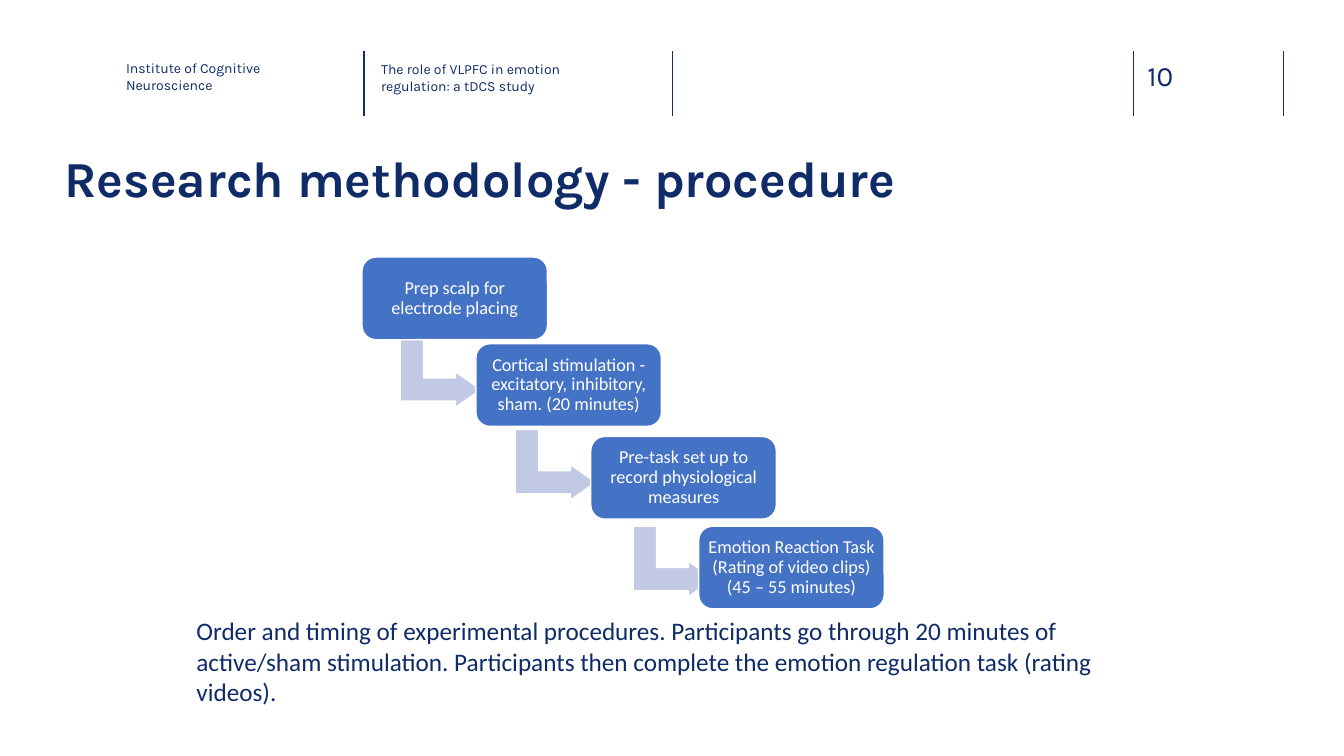
from lxml import etree
from pptx import Presentation
from pptx.dml.color import RGBColor
from pptx.enum.shapes import MSO_CONNECTOR as Connector, MSO_SHAPE as Shape
from pptx.enum.text import MSO_ANCHOR as Anchor, PP_ALIGN as Align
from pptx.oxml.ns import qn
from pptx.util import Inches, Pt

NAVY, BLUE, PALE, WHITE = "0F2C68", "4472C4", "C1C9E4", "FFFFFF"
RULE = "102D69"

STEPS = [
    ("Prep scalp for electrode placing", 3.59, 2.55),
    ("Cortical stimulation - excitatory, inhibitory, sham. (20 minutes)", 4.72, 3.41),
    ("Pre-task set up to record physiological measures", 5.86, 4.33),
    ("Emotion Reaction Task (Rating of video clips) (45 – 55 minutes)", 6.93, 5.22),
]
ARROW_OFFSETS = [(0.43, 0.74), (0.44, 0.8), (0.47, 0.84)]


def color(value):
    return RGBColor.from_string(value)


def style_text(frame, text, size, font, ink, bold=False, inset=0.0):
    frame.word_wrap = True
    frame.margin_left = frame.margin_right = Inches(inset)
    frame.margin_top = frame.margin_bottom = Inches(min(inset, 0.05))
    frame.text = text
    for span in frame.paragraphs[0].runs:
        span.font.size = Pt(size)
        span.font.name = font
        span.font.bold = bold
        span.font.color.rgb = color(ink)


def add_text(slide, box, text, size, font="Karla", **style):
    label = slide.shapes.add_textbox(*map(Inches, box))
    style_text(label.text_frame, text, size, font, NAVY, **style)


def add_block(slide, kind, box, fill):
    block = slide.shapes.add_shape(kind, *map(Inches, box))
    block.shadow.inherit = False
    block.fill.solid()
    block.fill.fore_color.rgb = color(fill)
    block.line.color.rgb = color(WHITE)
    block.line.width = Pt(1)
    return block


def add_header(slide, top, height):
    for x in (3.61, 6.67, 11.24, 12.73):
        rule = slide.shapes.add_connector(
            Connector.STRAIGHT, Inches(x), Inches(top), Inches(x), Inches(top + height))
        rule.line.color.rgb = color(RULE)
        rule.line.width = Pt(1)
        etree.SubElement(rule._element.spPr, qn("a:effectLst"))
    add_text(slide, (1.25, top + 0.08, 2.08, 0.45), "Institute of Cognitive Neuroscience", 10)
    add_text(slide, (3.78, top + 0.09, 2.26, 0.45),
             "The role of VLPFC in emotion regulation: a tDCS study", 10)
    add_text(slide, (11.38, top + 0.07, 0.73, 0.34), "10", 20)


def add_arrow(slide, left, top):
    arrow = add_block(slide, Shape.BENT_UP_ARROW, (left, top, 0.7, 0.8), PALE)
    arrow.rotation = 90
    for index, value in enumerate((0.33, 0.25, 0.36)):
        arrow.adjustments[index] = value


def add_step(slide, text, left, top):
    step = add_block(slide, Shape.ROUNDED_RECTANGLE, (left, top, 1.84, 0.82), BLUE)
    step.adjustments[0] = 0.17
    frame = step.text_frame
    style_text(frame, text, 13, "Calibri", WHITE, inset=0.05)
    frame.vertical_anchor = Anchor.MIDDLE
    para = frame.paragraphs[0]
    para.alignment = Align.CENTER
    para.line_spacing = 0.9


def add_procedure(slide):
    for index, (text, left, top) in enumerate(STEPS):
        if index < len(ARROW_OFFSETS):
            across, down = ARROW_OFFSETS[index]
            add_arrow(slide, left + across, top + down)
        add_step(slide, text, left, top)


def main():
    deck = Presentation()
    deck.slide_width, deck.slide_height = Inches(13.33), Inches(7.5)
    slide = deck.slides.add_slide(deck.slide_layouts[6])
    add_header(slide, 0.51, 0.64)
    add_text(slide, (0.64, 1.46, 11.77, 0.95), "Research methodology - procedure", 36, bold=True)
    add_procedure(slide)
    add_text(slide, (1.85, 6.06, 9.34, 1.01),
             "Order and timing of experimental procedures. Participants go through 20 minutes of "
             "active/sham stimulation. Participants then complete the emotion regulation task "
             "(rating videos).", 18, font="Calibri", inset=0.1)
    deck.save("out.pptx")


if __name__ == "__main__":
    main()
